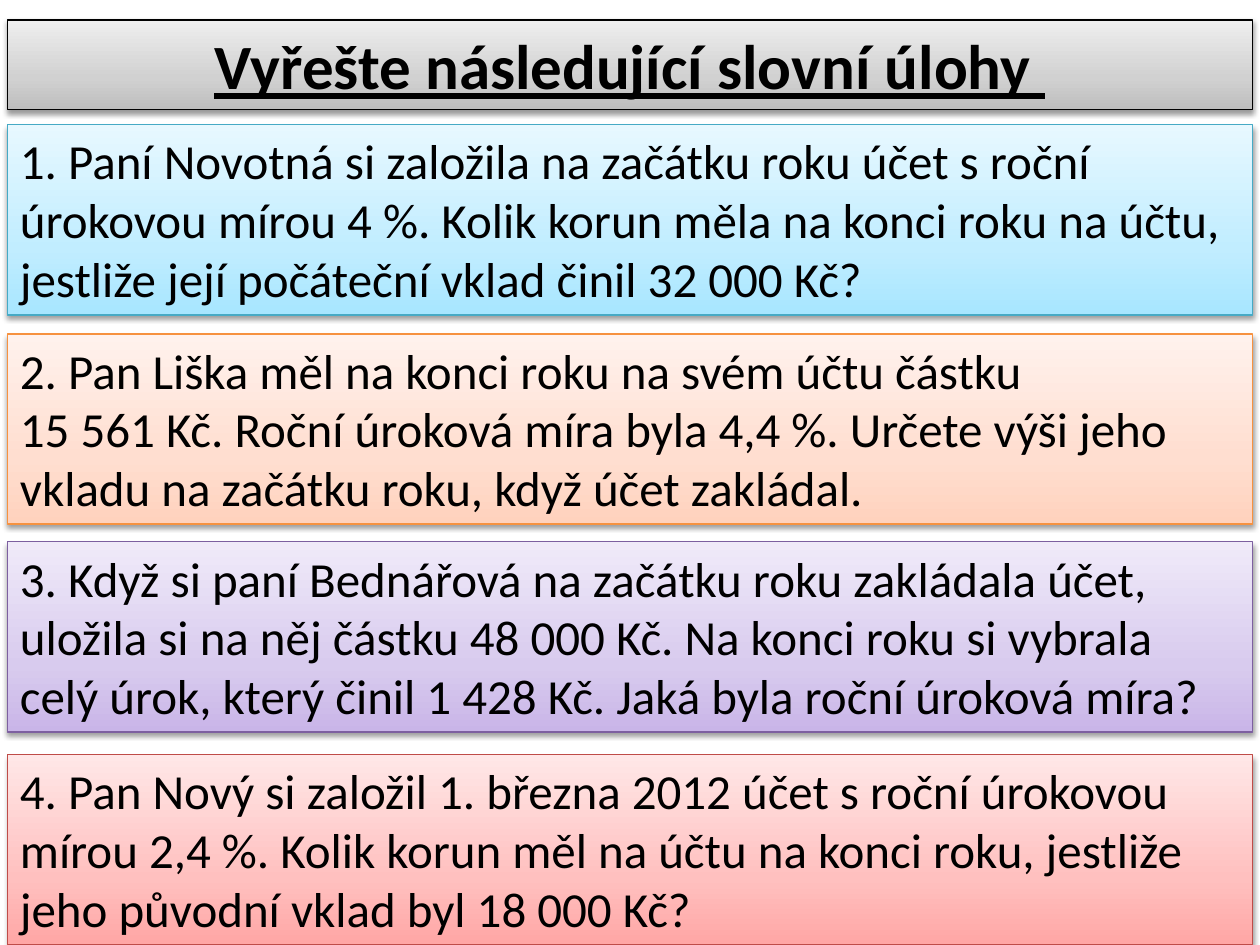
from copy import deepcopy

from lxml import etree
from pptx import Presentation
from pptx.dml.color import RGBColor
from pptx.enum.shapes import MSO_SHAPE
from pptx.enum.text import MSO_ANCHOR, MSO_AUTO_SIZE, PP_ALIGN
from pptx.oxml.ns import qn
from pptx.util import Inches, Pt

RECT = MSO_SHAPE.RECTANGLE
TOP = MSO_ANCHOR.TOP
GROW = MSO_AUTO_SIZE.SHAPE_TO_FIT_TEXT
LEFT, CENTER = PP_ALIGN.LEFT, PP_ALIGN.CENTER
FONT = "Calibri"
BOX_LEFT, BOX_WIDTH = 0.06, 9.88
TITLE_TOP, TITLE_HEIGHT = 0.16, 0.71
TASK_HEIGHT = 1.51
STOPS = (0, 0.35, 1)

TITLE = "Vyřešte následující slovní úlohy "
TITLE_COLORS = ("BDBDBD", "D1D1D1", "EEEEEE")
TASKS = [
    (0.99, ("A7E6FF", "C1EDFF", "E7F8FF"), "46AAC5", [
        "1. Paní Novotná si založila na začátku roku účet s roční",
        "úrokovou mírou 4 %. Kolik korun měla na konci roku na účtu,",
        "jestliže její počáteční vklad činil 32 000 Kč?"]),
    (2.65, ("FFD2BD", "FFDED0", "FFF2ED"), "F69240", [
        "2. Pan Liška měl na konci roku na svém účtu částku",
        "15 561 Kč. Roční úroková míra byla 4,4 %. Určete výši jeho "
        "vkladu na začátku roku, když účet zakládal."]),
    (4.3, ("C9B5E8", "D8CBEE", "F0EAF9"), "7D60A0", [
        "3. Když si paní Bednářová na začátku roku zakládala účet,",
        "uložila si na něj částku 48 000 Kč. Na konci roku si vybrala",
        "celý úrok, který činil 1 428 Kč. Jaká byla roční úroková míra?"]),
    (5.99, ("FFA6A5", "FFC0BF", "FFE7E7"), "BF4C48", [
        "4. Pan Nový si založil 1. března 2012 účet s roční úrokovou",
        "mírou 2,4 %. Kolik korun měl na účtu na konci roku, jestliže",
        "jeho původní vklad byl 18 000 Kč?"]),
]


def rgb(value):
    return RGBColor.from_string(value)


def set_gradient(sp, colors):
    sp.fill.gradient()
    sp.fill.gradient_angle = 90
    stops = sp._element.spPr.find(qn("a:gradFill")).find(qn("a:gsLst"))
    stops.append(deepcopy(stops[-1]))
    for stop, position, color in zip(sp.fill.gradient_stops, STOPS, colors):
        stop.position = position
        stop.color.rgb = rgb(color)


def set_shadow(sp):
    sp.shadow.inherit = False
    effects = sp._element.spPr.find(qn("a:effectLst"))
    shadow = etree.SubElement(effects, qn("a:outerShdw"), blurRad=str(Pt(3.1)),
                              dist=str(Pt(1.6)), dir="5400000", rotWithShape="0")
    color = etree.SubElement(shadow, qn("a:srgbClr"), val="000000")
    etree.SubElement(color, qn("a:alpha"), val="38000")


def add_text(tf, paragraphs, size=28, color="000000", bold=False,
             underline=False, align=LEFT):
    tf.word_wrap = True
    tf.auto_size = GROW
    tf.vertical_anchor = TOP
    for i, text in enumerate(paragraphs):
        p = tf.paragraphs[0] if i == 0 else tf.add_paragraph()
        p.alignment = align
        r = p.add_run()
        r.text = text
        r.font.name = FONT
        r.font.size = Pt(size)
        r.font.bold = bold
        r.font.underline = underline
        r.font.color.rgb = rgb(color)


def add_panel(slide, box, colors, line, paragraphs, **text_format):
    sp = slide.shapes.add_shape(RECT, *map(Inches, box))
    set_gradient(sp, colors)
    sp.line.color.rgb = rgb(line)
    sp.line.width = Pt(0.75)
    set_shadow(sp)
    add_text(sp.text_frame, paragraphs, **text_format)


def main():
    prs = Presentation()
    prs.slide_width, prs.slide_height = Inches(10), Inches(7.5)
    slide = prs.slides.add_slide(prs.slide_layouts[6])
    add_panel(slide, (BOX_LEFT, TITLE_TOP, BOX_WIDTH, TITLE_HEIGHT),
              TITLE_COLORS, "000000", [TITLE],
              size=36, bold=True, underline=True, align=CENTER)
    for top, colors, line, paragraphs in TASKS:
        add_panel(slide, (BOX_LEFT, top, BOX_WIDTH, TASK_HEIGHT),
                  colors, line, paragraphs)
    prs.save("out.pptx")


if __name__ == "__main__":
    main()
